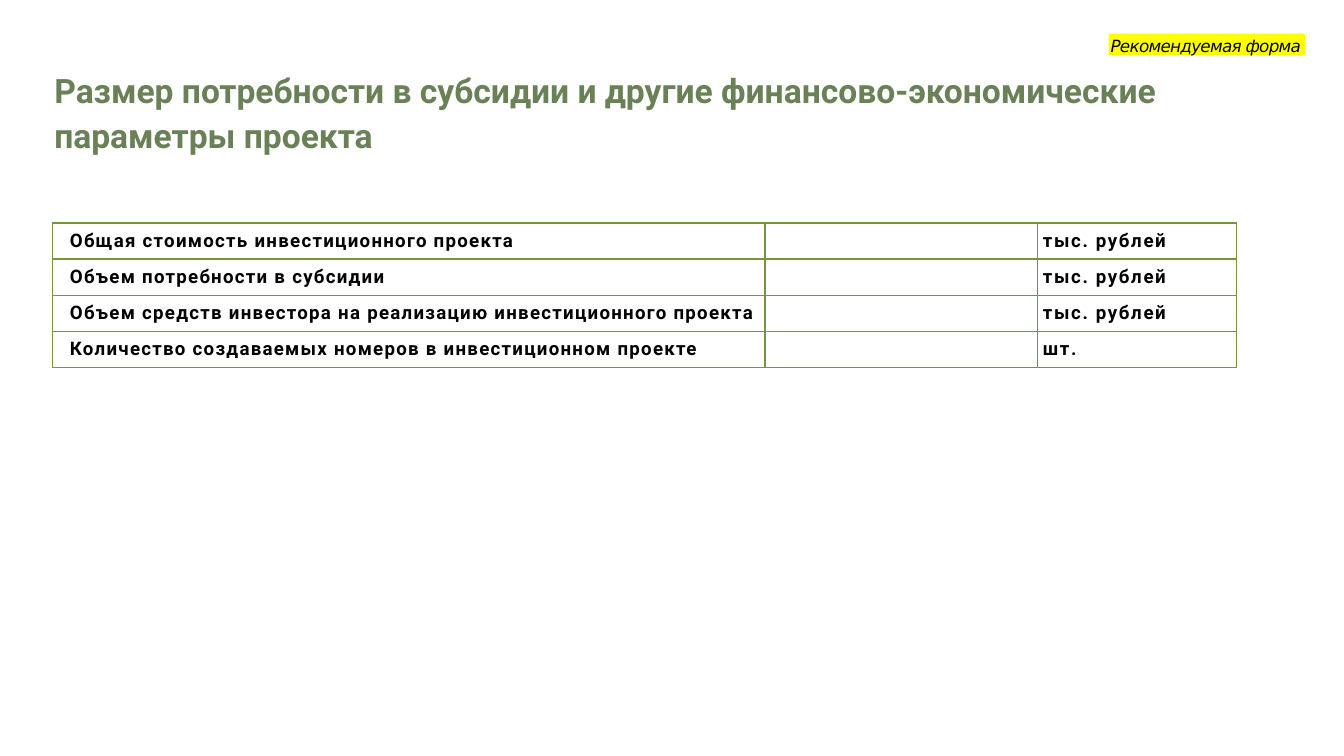
from dataclasses import dataclass

import pptx
import pptx.dml.color
import pptx.enum.shapes
import pptx.enum.text
import pptx.oxml.ns
import pptx.util
from lxml import etree

Inches = pptx.util.Inches
Pt = pptx.util.Pt
RGB = pptx.dml.color.RGBColor.from_string
qn = pptx.oxml.ns.qn


@dataclass(frozen=True)
class Theme:
    heading: str = "6A8157"
    ink: str = "000000"
    border: str = "77933C"
    highlight: str = "FFFF00"
    font: str = "Roboto"
    note_font: str = "DejaVu Sans"
    title_size: float = 18
    table_size: float = 10
    note_size: float = 9
    border_width: float = 0.96


THEME = Theme()
PARAMETERS = [
    ("Общая стоимость инвестиционного проекта", "тыс. рублей"),
    ("Объем потребности в субсидии", "тыс. рублей"),
    ("Объем средств инвестора на реализацию инвестиционного проекта", "тыс. рублей"),
    ("Количество создаваемых номеров в инвестиционном проекте", "шт."),
]


def add_run(paragraph, words, font, size, color, bold=False, italic=False, spacing=0):
    run = paragraph.add_run()
    run.text = words
    run.font.name = font
    run.font.size = Pt(size)
    run.font.bold = bold
    run.font.italic = italic
    run.font.color.rgb = RGB(color)
    if spacing:
        run.font._element.set("spc", str(round(spacing * 100)))


def set_frame(frame, wrap):
    frame.word_wrap = wrap
    frame.auto_size = pptx.enum.text.MSO_AUTO_SIZE.NONE
    frame.vertical_anchor = pptx.enum.text.MSO_ANCHOR.TOP
    frame.margin_left = frame.margin_top = Pt(1)
    frame.margin_right = frame.margin_bottom = 0
    paragraph = frame.paragraphs[0]
    paragraph.alignment = pptx.enum.text.PP_ALIGN.LEFT
    return paragraph


def place_title(slide, left, top, width, height):
    heading = slide.shapes.title
    heading.left, heading.top = Inches(left), Inches(top)
    heading.width, heading.height = Inches(width), Inches(height)
    paragraph = set_frame(heading.text_frame, True)
    heading.text_frame.margin_top = Inches(0.02)
    paragraph.line_spacing = 1.13
    paragraph.space_before = Pt(0)
    add_run(paragraph,
            "Размер потребности в субсидии и другие финансово-экономические параметры проекта",
            THEME.font, THEME.title_size, THEME.heading, bold=True)


def place_form_note(slide, left, top, width, height):
    form_note = slide.shapes.add_shape(
        pptx.enum.shapes.MSO_SHAPE.RECTANGLE,
        Inches(left), Inches(top), Inches(width), Inches(height))
    form_note.shadow.inherit = False
    form_note.fill.solid()
    form_note.fill.fore_color.rgb = RGB(THEME.highlight)
    form_note.line.fill.background()
    add_run(set_frame(form_note.text_frame, False), "Рекомендуемая форма",
            THEME.note_font, THEME.note_size, THEME.ink, italic=True, spacing=-0.4)


def outline_cell(cell):
    properties = cell._tc.get_or_add_tcPr()
    for side in ("a:lnL", "a:lnR", "a:lnT", "a:lnB"):
        edge = etree.SubElement(properties, qn(side), w=str(Pt(THEME.border_width)))
        paint = etree.SubElement(edge, qn("a:solidFill"))
        etree.SubElement(paint, qn("a:srgbClr"), val=THEME.border)
    cell.fill.background()


def fill_cell(cell, words, left_margin, spacing):
    outline_cell(cell)
    cell.margin_left, cell.margin_right = Inches(left_margin), Inches(0.04)
    cell.margin_top = cell.margin_bottom = Inches(0.05)
    cell.vertical_anchor = pptx.enum.text.MSO_ANCHOR.TOP
    paragraph = cell.text_frame.paragraphs[0]
    if words:
        add_run(paragraph, words, THEME.font, THEME.table_size, THEME.ink,
                bold=True, spacing=spacing)
    else:
        etree.SubElement(paragraph._p, qn("a:endParaRPr"),
                         sz=str(round(THEME.table_size * 100)))


def place_parameters(slide, left, top, width, height):
    parameters = slide.shapes.add_table(
        len(PARAMETERS), 3, Inches(left), Inches(top), Inches(width), Inches(height)).table
    parameters.first_row = parameters.horz_banding = False
    name_width, value_width = 5.3, 2.03
    column_widths = (name_width, value_width, width - name_width - value_width)
    for column, column_width in zip(parameters.columns, column_widths):
        column.width = Inches(column_width)
    for row, (parameter, unit) in enumerate(PARAMETERS):
        fill_cell(parameters.cell(row, 0), parameter, 0.13, 0.7)
        fill_cell(parameters.cell(row, 1), "", 0.04, 0)
        fill_cell(parameters.cell(row, 2), unit, 0.04, 0.9)


def main():
    deck = pptx.Presentation()
    deck.slide_width, deck.slide_height = Inches(10), Inches(10 * 9 / 16)
    slide = deck.slides.add_slide(deck.slide_layouts.get_by_name("Title Only"))
    place_parameters(slide, 0.39, 1.66, 8.81, 1.07)
    place_title(slide, 0.39, 0.46, 9.01, 0.7)
    place_form_note(slide, 8.25, 0.25, 1.46, 0.16)
    deck.save("out.pptx")


if __name__ == "__main__":
    main()
